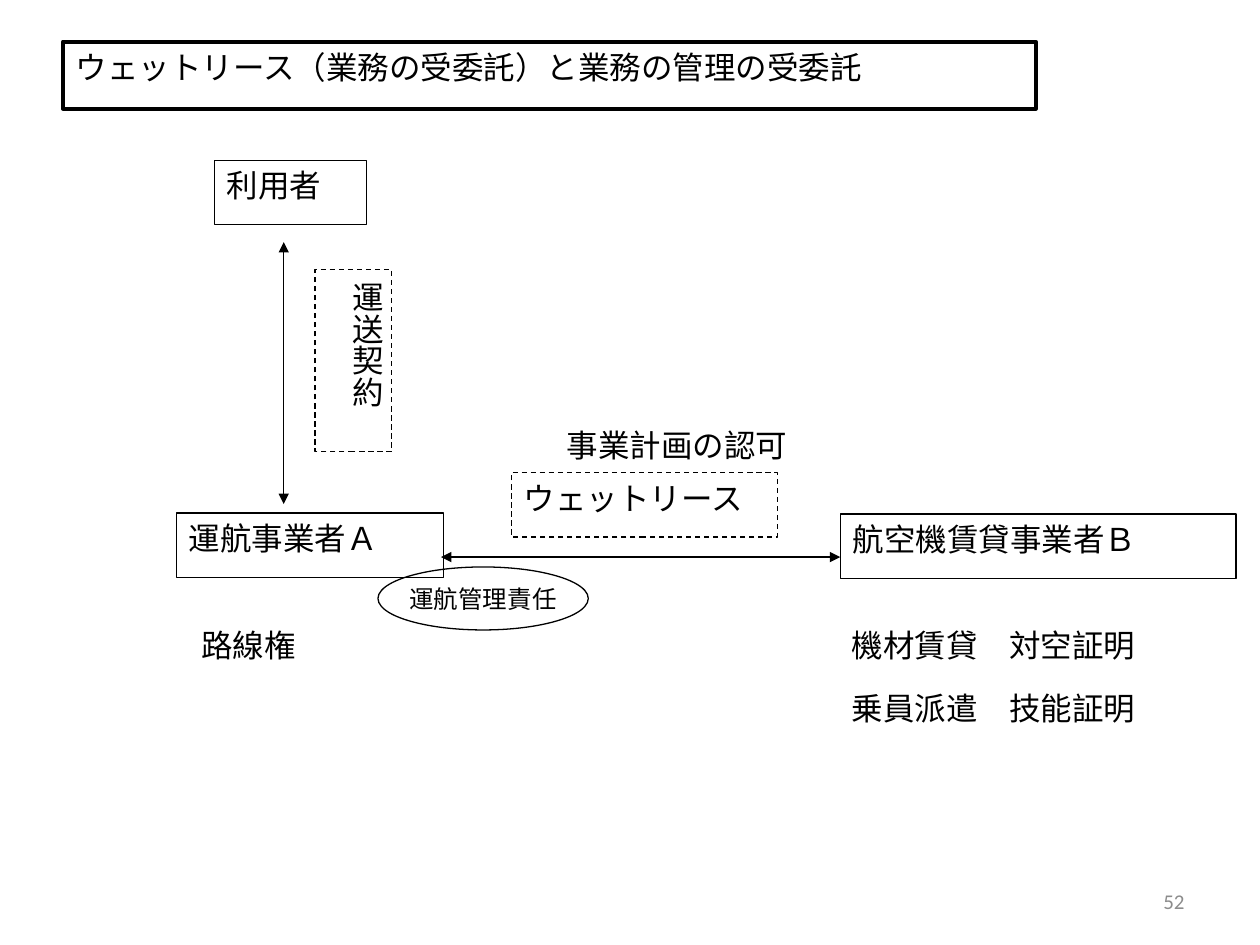
from lxml.etree import SubElement
from pptx import Presentation
from pptx.dml.color import RGBColor
from pptx.enum.dml import MSO_LINE
from pptx.enum.shapes import MSO_CONNECTOR, MSO_SHAPE
from pptx.enum.text import MSO_ANCHOR, MSO_AUTO_SIZE, PP_ALIGN
from pptx.oxml.ns import qn
from pptx.util import Cm, Pt

FONT = "Calibri"
BLACK = "000000"
GRAY = "8C8C8C"
BOX_HEIGHT = 1.3
LABEL_HEIGHT = 1.27


def color(hex_string):
    return RGBColor.from_string(hex_string)


def write_text(shape, text, *, size=18, hex_color=BLACK, align=PP_ALIGN.LEFT,
               anchor=MSO_ANCHOR.TOP, wrap=True, vertical=False):
    frame = shape.text_frame
    frame.text = text
    frame.auto_size = MSO_AUTO_SIZE.NONE
    frame.word_wrap = wrap
    frame.vertical_anchor = anchor
    if vertical:
        frame._txBody.bodyPr.set("vert", "eaVert")
    paragraph = frame.paragraphs[0]
    paragraph.alignment = align
    font = paragraph.runs[0].font
    font.name = FONT
    font.size = Pt(size)
    font.color.rgb = color(hex_color)


def set_outline(shape, width=0.75, dashed=False):
    shape.line.color.rgb = color(BLACK)
    shape.line.width = Pt(width)
    if dashed:
        shape.line.dash_style = MSO_LINE.DASH


def add_title(slide, text, left, top, width, height):
    title = slide.shapes.title
    title.left, title.top = Cm(left), Cm(top)
    title.width, title.height = Cm(width), Cm(height)
    set_outline(title, width=2.25)
    write_text(title, text)


def add_box(slide, text, left, top, width, height=BOX_HEIGHT, *,
            kind=MSO_SHAPE.RECTANGLE, dashed=False, **text_format):
    """Add an unfilled, outlined shape with text."""
    shape = slide.shapes.add_shape(kind, Cm(left), Cm(top), Cm(width), Cm(height))
    shape.shadow.inherit = False
    shape.fill.background()
    set_outline(shape, dashed=dashed)
    write_text(shape, text, **text_format)


def add_label(slide, text, left, top, width, height=LABEL_HEIGHT, **text_format):
    label = slide.shapes.add_textbox(Cm(left), Cm(top), Cm(width), Cm(height))
    write_text(label, text, **text_format)


def add_double_arrow(slide, start, end):
    connector = slide.shapes.add_connector(
        MSO_CONNECTOR.STRAIGHT, *map(Cm, start), *map(Cm, end))
    set_outline(connector)
    line = connector.line._get_or_add_ln()
    for tag in ("a:headEnd", "a:tailEnd"):
        SubElement(line, qn(tag)).set("type", "triangle")
    SubElement(connector._element.spPr, qn("a:effectLst"))


def main():
    presentation = Presentation()
    presentation.slide_width, presentation.slide_height = Cm(25.4), Cm(19.05)
    slide = presentation.slides.add_slide(presentation.slide_layouts[5])

    add_title(slide, "ウェットリース（業務の受委託）と業務の管理の受委託", 1.27, 0.84, 19.61, 1.35)

    add_box(slide, "利用者", 4.32, 3.23, 3.07)
    add_box(slide, "運航事業者Ａ", 3.56, 10.34, 5.38)
    add_box(slide, "航空機賃貸事業者Ｂ", 16.94, 10.36, 7.98)

    add_box(slide, "運送契約", 6.35, 5.44, 1.55, 3.66, dashed=True, vertical=True)
    add_box(slide, "ウェットリース", 10.31, 9.53, 5.36, dashed=True)
    add_double_arrow(slide, (5.72, 4.88), (5.72, 10.16))
    add_double_arrow(slide, (8.89, 11.23), (16.94, 11.23))
    add_box(slide, "運航管理責任", 7.62, 11.43, 4.24, 1.27, kind=MSO_SHAPE.OVAL,
            size=14, align=PP_ALIGN.CENTER, anchor=MSO_ANCHOR.MIDDLE, wrap=False)

    add_label(slide, "事業計画の認可", 11.18, 8.46, 5.2, 1.02)
    add_label(slide, "路線権", 3.81, 12.5, 3.05)
    for row, text in enumerate(("機材賃貸　対空証明", "乗員派遣　技能証明")):
        add_label(slide, text, 16.92, 12.5 + row * LABEL_HEIGHT, 7.85)

    add_label(slide, "52", 18.21, 17.65, 5.92, 1.02, size=12, hex_color=GRAY,
              align=PP_ALIGN.RIGHT, anchor=MSO_ANCHOR.MIDDLE)

    presentation.save("out.pptx")


if __name__ == "__main__":
    main()
